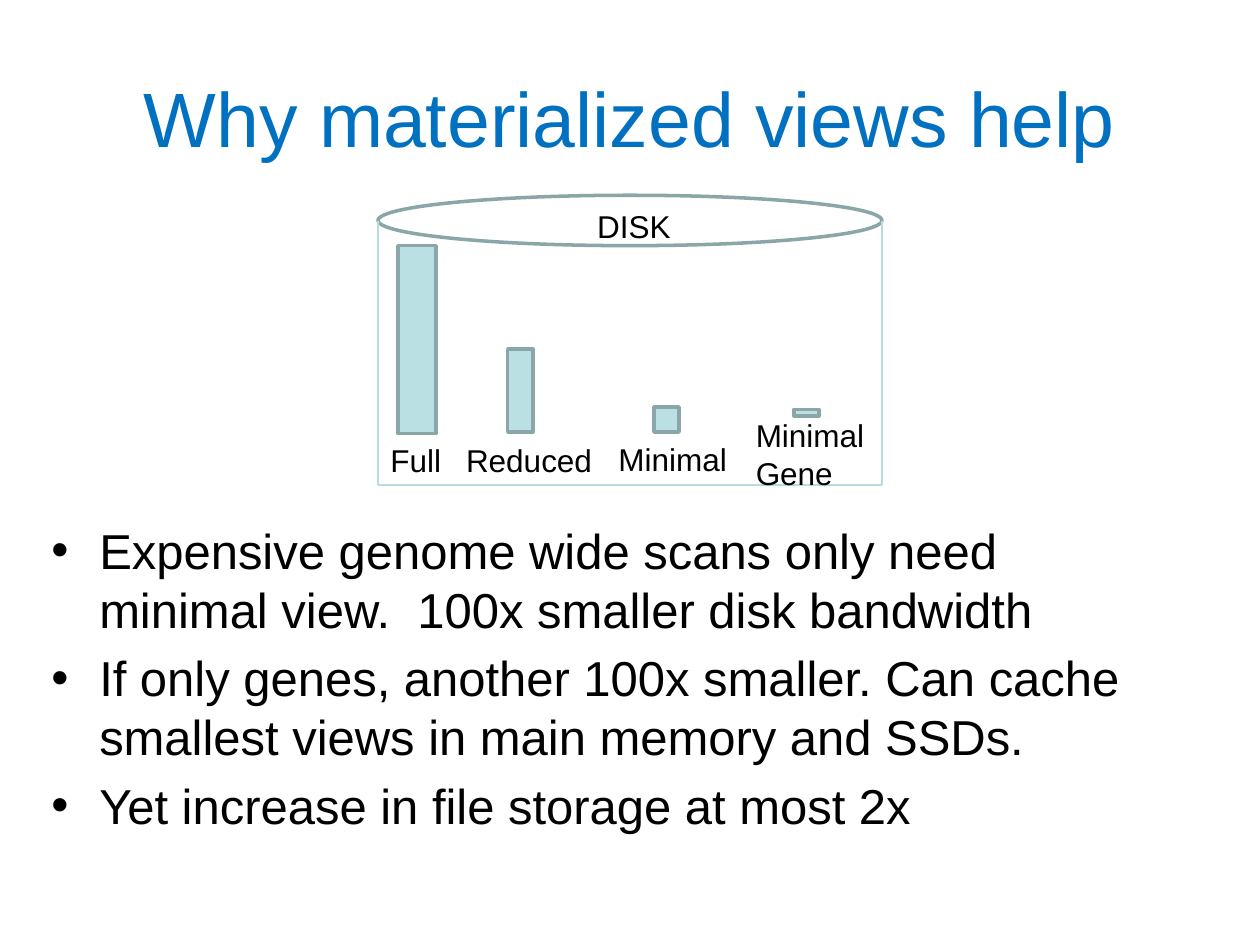
from dataclasses import dataclass

from lxml import etree
from pptx import Presentation
from pptx import util as u
from pptx.dml.color import RGBColor
from pptx.enum import shapes, text
from pptx.oxml.ns import qn

FONT = "Arial"
BLACK, BLUE = "000000", "0070C0"
BAR_FILL, OUTLINE, DISK_EDGE = "BBE0E3", "8AA6A8", "B6DCDF"
DISK_LEFT, DISK_RIGHT, DISK_TOP, DISK_BOTTOM = 3, 7, 1.75, 3.85
RIM_HEIGHT = 0.4


@dataclass
class Box:
    left: float
    top: float
    width: float
    height: float

    def lengths(self) -> list:
        return [u.Inches(v) for v in (self.left, self.top, self.width, self.height)]


@dataclass
class View:
    label: str
    label_box: Box
    bar: Box


VIEWS = [
    View("Full", Box(3, 3.45, 0.61, 0.4), Box(3.16, 1.95, 0.3, 1.49)),
    View("Reduced", Box(3.6, 3.45, 1.21, 0.4), Box(4.03, 2.77, 0.2, 0.66)),
    View("Minimal", Box(4.81, 3.44, 1.07, 0.4), Box(5.19, 3.23, 0.2, 0.2)),
    View("Minimal\nGene", Box(5.9, 3.25, 1.07, 0.71), Box(6.3, 3.25, 0.2, 0.05)),
]
POINTS = [
    "Expensive genome wide scans only need minimal view.  100x smaller disk bandwidth",
    "If only genes, another 100x smaller. Can cache smallest views in main memory and SSDs.",
    "Yet increase in file storage at most 2x",
]


def colour(value: str) -> RGBColor:
    return RGBColor.from_string(value)


def add_text(page, box: Box, words: str, size: float, ink: str = BLACK, wrap: bool = False):
    frame = page.shapes.add_textbox(*box.lengths()).text_frame
    frame.word_wrap = wrap
    frame.text = words
    for para in frame.paragraphs:
        for span in para.runs:
            span.font.name = FONT
            span.font.size = u.Pt(size)
            span.font.color.rgb = colour(ink)
    return frame


def add_outlined(page, kind, box: Box, fill: str = "") -> None:
    shape = page.shapes.add_shape(kind, *box.lengths())
    shape.shadow.inherit = False
    if fill:
        shape.fill.solid()
        shape.fill.fore_color.rgb = colour(fill)
    else:
        shape.fill.background()
    shape.line.color.rgb = colour(OUTLINE)
    shape.line.width = u.Pt(2)


def add_edge(page, x1: float, y1: float, x2: float, y2: float) -> None:
    ends = [u.Inches(v) for v in (x1, y1, x2, y2)]
    edge = page.shapes.add_connector(shapes.MSO_CONNECTOR.STRAIGHT, *ends)
    edge.line.color.rgb = colour(DISK_EDGE)
    edge.line.width = u.Pt(0.75)
    etree.SubElement(edge._element.spPr, qn("a:effectLst"))


def add_bullet(para) -> None:
    props = para._p.get_or_add_pPr()
    props.set("marL", str(u.Inches(0.38)))
    props.set("indent", str(u.Inches(-0.38)))
    etree.SubElement(props, qn("a:buFont"), typeface=FONT)
    etree.SubElement(props, qn("a:buChar"), char="•")


def main() -> None:
    deck = Presentation()
    deck.slide_width, deck.slide_height = u.Inches(10), u.Inches(7.5)
    page = deck.slides.add_slide(deck.slide_layouts[6])

    # Title
    title = add_text(page, Box(0.5, 0.3, 9, 1.25), "Why materialized views help", 44, BLUE, True)
    title.vertical_anchor = text.MSO_ANCHOR.MIDDLE
    title.paragraphs[0].alignment = text.PP_ALIGN.CENTER

    # Bullet points
    body = add_text(page, Box(0.31, 4.08, 9, 2.42), "\n".join(POINTS), 28, wrap=True)
    for index, para in enumerate(body.paragraphs):
        para.space_before = u.Pt(5.6 if index else 0)
        add_bullet(para)

    # Disk: rim, sides and base
    rim = Box(DISK_LEFT, DISK_TOP - RIM_HEIGHT / 2, DISK_RIGHT - DISK_LEFT, RIM_HEIGHT)
    add_outlined(page, shapes.MSO_SHAPE.OVAL, rim)
    for x in (DISK_LEFT, DISK_RIGHT):
        add_edge(page, x, DISK_TOP, x, DISK_BOTTOM)
    add_edge(page, DISK_LEFT, DISK_BOTTOM, DISK_RIGHT, DISK_BOTTOM)
    add_text(page, Box(4.64, 1.59, 0.79, 0.4), "DISK", 18)

    # Views stored on the disk, drawn by size
    for view in VIEWS:
        add_text(page, view.label_box, view.label, 18)
        add_outlined(page, shapes.MSO_SHAPE.RECTANGLE, view.bar, BAR_FILL)

    deck.save("out.pptx")


if __name__ == "__main__":
    main()
